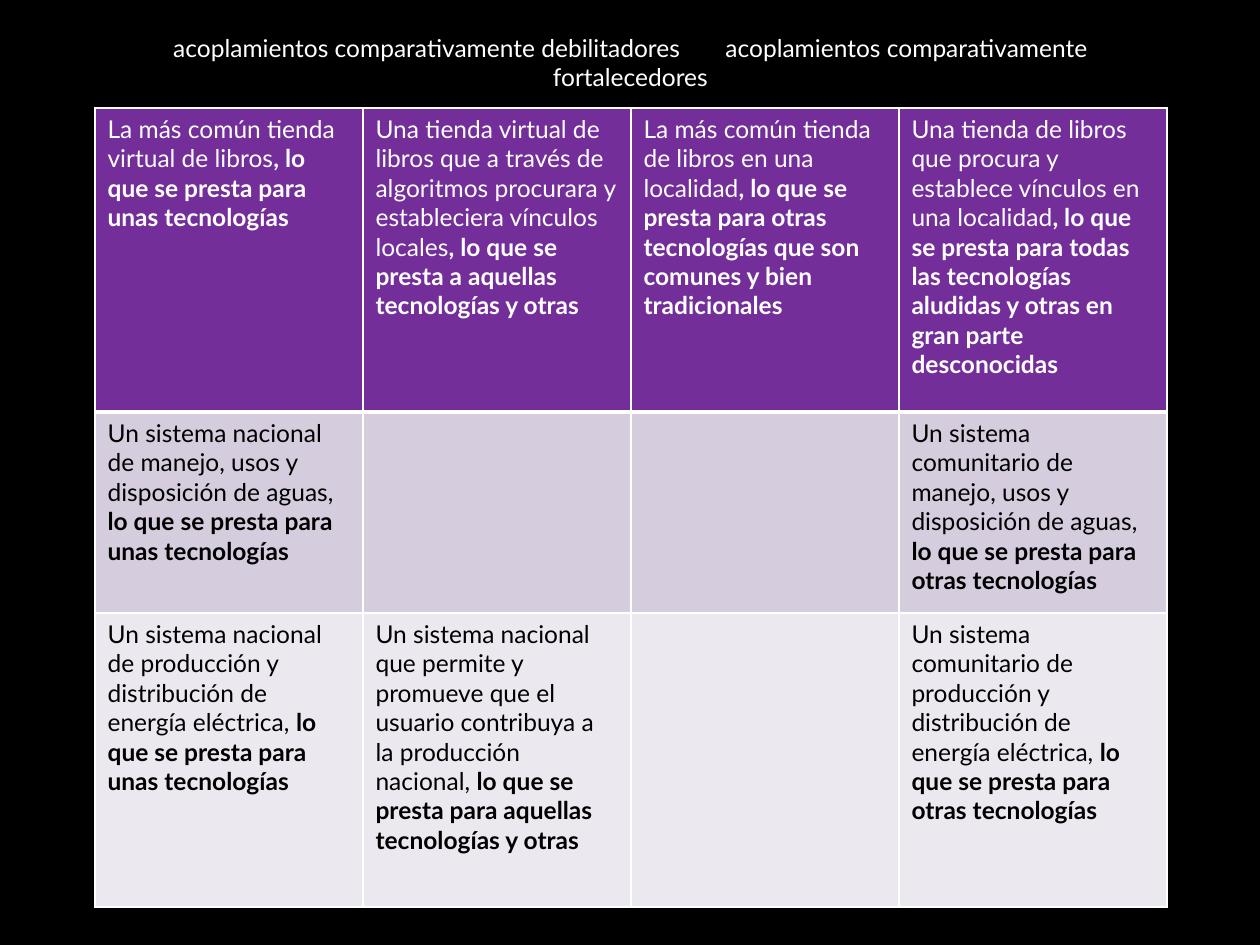
from lxml import etree
from pptx import Presentation
from pptx import util as u
from pptx.dml.color import RGBColor
from pptx.enum import text
from pptx.oxml.ns import qn

PX = 914400 / 126
FONT = "Lato"
SIZE = 14
COLORS = {"back": "000000", "light": "FFFFFF", "dark": "000000",
          "header": "732E9A", "band": "D5CDDE", "plain": "EBE8EF"}

TITLE = ["acoplamientos comparativamente debilitadores",
         "acoplamientos comparativamente fortalecedores"]
TITLE_BOX = (95, 16, 1071, 92)
TITLE_GAP = 22

TABLE_LEFT, TABLE_TOP = 95, 108
COLUMN_WIDTH = 268
EMPTY = ()
ROWS = [
    {"height": 304, "fill": "header", "ink": "light", "top": 1, "bottom": 3, "cells": [
        ("La más común tienda virtual de libros",
         ", lo que se presta para unas tecnologías"),
        ("Una tienda virtual de libros que a través de algoritmos procurara y "
         "estableciera vínculos locales",
         ", lo que se presta a aquellas tecnologías y otras"),
        ("La más común tienda de libros en una localidad",
         ", lo que se presta para otras tecnologías que son comunes y bien tradicionales"),
        ("Una tienda de libros que procura y establece vínculos en una localidad",
         ", lo que se presta para todas las tecnologías aludidas y otras en gran parte "
         "desconocidas")]},
    {"height": 201, "fill": "band", "ink": "dark", "top": 3, "bottom": 1, "cells": [
        ("Un sistema nacional de manejo, usos y disposición de aguas, ",
         "lo que se presta para unas tecnologías"),
        EMPTY,
        EMPTY,
        ("Un sistema comunitario de manejo, usos y disposición de aguas, ",
         "lo que se presta para otras tecnologías")]},
    {"height": 294, "fill": "plain", "ink": "dark", "top": 1, "bottom": 1, "cells": [
        ("Un sistema nacional de producción y distribución de energía eléctrica, ",
         "lo que se presta para unas tecnologías"),
        ("Un sistema nacional que permite y promueve que el usuario contribuya a la "
         "producción nacional, ",
         "lo que se presta para aquellas tecnologías y otras"),
        EMPTY,
        ("Un sistema comunitario de producción y distribución de energía eléctrica, ",
         "lo que se presta para otras tecnologías")]},
]


def px(length):
    return u.Emu(round(length * PX))


def color(name):
    return RGBColor.from_string(COLORS[name])


def set_font(para, ink):
    para.font.name = FONT
    para.font.size = u.Pt(SIZE)
    para.font.color.rgb = color(ink)


def set_borders(cell, top, bottom):
    properties = cell._tc.get_or_add_tcPr()
    sides = (("lnL", 1), ("lnR", 1), ("lnT", top), ("lnB", bottom))
    for index, (side, width) in enumerate(sides):
        line = etree.Element(qn("a:" + side), w=str(u.Pt(width)))
        fill = etree.SubElement(line, qn("a:solidFill"))
        etree.SubElement(fill, qn("a:srgbClr"), val=COLORS["light"])
        properties.insert(index, line)


def add_title(page):
    box = page.shapes.title
    box.left, box.top, box.width, box.height = map(px, TITLE_BOX)
    frame = box.text_frame
    frame.word_wrap = True
    frame.auto_size = text.MSO_AUTO_SIZE.NONE
    frame.vertical_anchor = text.MSO_ANCHOR.MIDDLE
    para = frame.paragraphs[0]
    para.alignment = text.PP_ALIGN.CENTER
    set_font(para, "light")
    for words in (TITLE[0], " ", TITLE[1]):
        span = para.add_run()
        span.text = words
        if words == " ":
            span.font._element.set("spc", str(TITLE_GAP * 100))


def add_comparison(page):
    columns = len(ROWS[0]["cells"])
    height = sum(row["height"] for row in ROWS)
    table = page.shapes.add_table(len(ROWS), columns, px(TABLE_LEFT), px(TABLE_TOP),
                                  px(COLUMN_WIDTH * columns), px(height)).table
    table.first_row = table.horz_banding = False
    for column in table.columns:
        column.width = px(COLUMN_WIDTH)
    for r, row in enumerate(ROWS):
        table.rows[r].height = px(row["height"])
        for c, parts in enumerate(row["cells"]):
            cell = table.cell(r, c)
            cell.fill.solid()
            cell.fill.fore_color.rgb = color(row["fill"])
            set_borders(cell, row["top"], row["bottom"])
            para = cell.text_frame.paragraphs[0]
            set_font(para, row["ink"])
            for words, bold in zip(parts, (False, True)):
                span = para.add_run()
                span.text = words
                span.font.bold = bold


def main():
    deck = Presentation()
    deck.slide_width, deck.slide_height = u.Inches(10), u.Inches(7.5)
    page = deck.slides.add_slide(deck.slide_layouts[5])
    page.background.fill.solid()
    page.background.fill.fore_color.rgb = color("back")
    add_title(page)
    add_comparison(page)
    deck.save("out.pptx")


if __name__ == "__main__":
    main()
